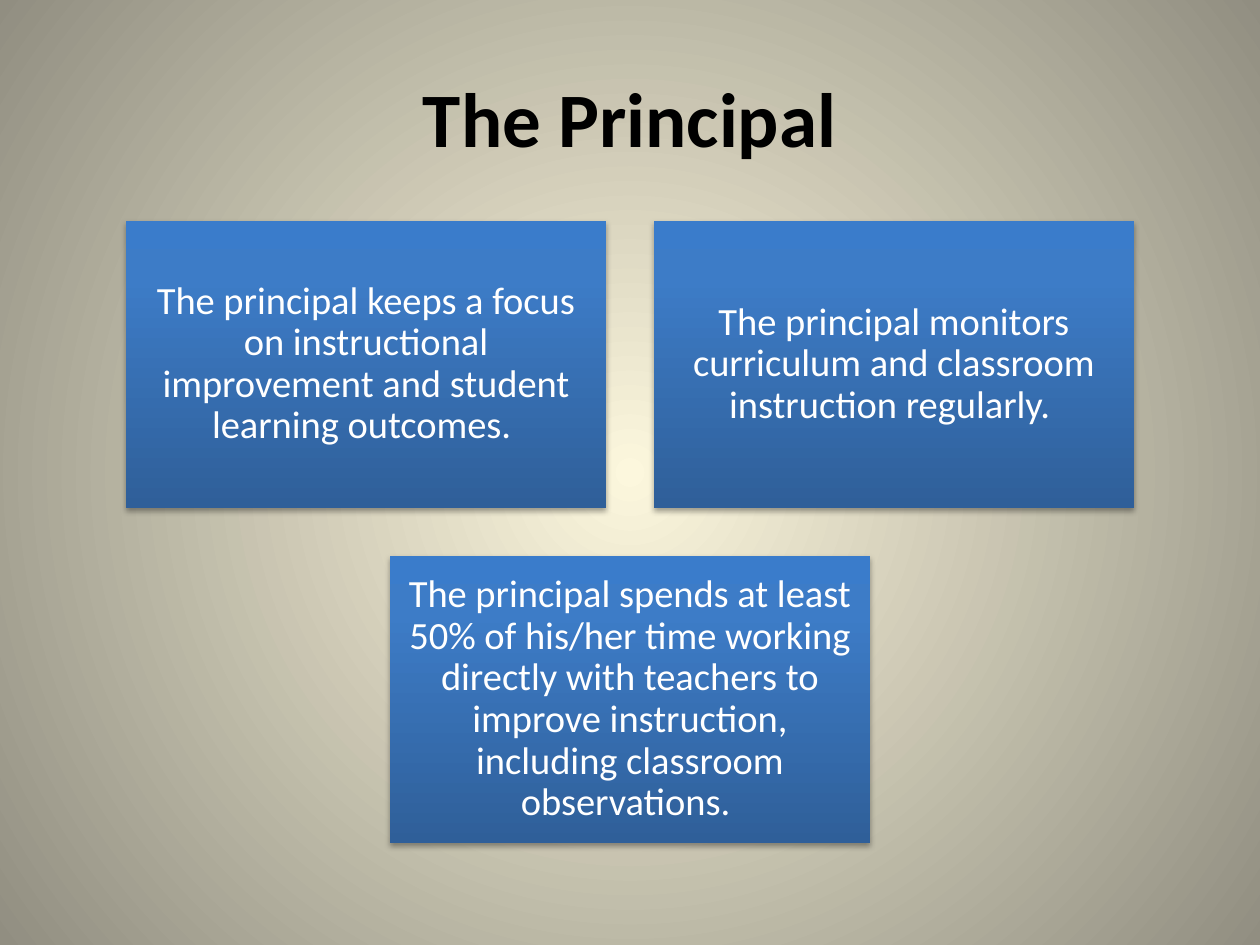
"""Build the slide on the principal's three duties."""
from lxml import etree
from pptx import Presentation
from pptx.dml.color import RGBColor as RGB
from pptx.enum.shapes import MSO_SHAPE as Kind
from pptx.enum.text import MSO_ANCHOR as Anchor, PP_ALIGN as Align
from pptx.oxml.ns import qn
from pptx.util import Inches, Pt

BLACK = RGB(0x00, 0x00, 0x00)
WHITE = RGB(0xFF, 0xFF, 0xFF)
CREAM = RGB(0xFC, 0xF7, 0xDD)
STONE = RGB(0x91, 0x8E, 0x81)
NAVY = RGB(0x2F, 0x5F, 0x99)
BLUE = RGB(0x3D, 0x7C, 0xC7)
SKY = RGB(0x3A, 0x7C, 0xCB)


def add(node, tag, **attrs):
    return etree.SubElement(node, qn(tag), attrs)


def shade(fill, root, stops):
    fill.gradient()
    grad = next(root.iter(qn("a:gradFill")))
    grad.clear()
    grad.set("rotWithShape", "1")
    items = add(grad, "a:gsLst")
    for pos, color in stops:
        stop = add(items, "a:gs", pos=str(pos * 1000))
        add(stop, "a:srgbClr", val=str(color))
    return grad


deck = Presentation()
deck.slide_width, deck.slide_height = Inches(10), Inches(7.5)
slide = deck.slides.add_slide(deck.slide_layouts[6])

grad = shade(slide.background.fill, slide.element, [(0, CREAM), (100, STONE)])
glow = add(grad, "a:path", path="circle")
add(glow, "a:fillToRect", l="50000", t="50000", r="50000", b="50000")

title = slide.shapes.add_textbox(Inches(0.5), Inches(0.3), Inches(9), Inches(1.25))
title.text_frame.text = "The Principal"
looks = [(title, {"size": Pt(44), "bold": True}, BLACK, 1.0, 0.1)]

wide, high, gap = 3.81, 2.28, 0.38
left, top = 1, 1.75
duties = [
    (0, 0, "The principal keeps a focus on instructional improvement and student learning outcomes. "),
    (1, 0, "The principal monitors curriculum and classroom instruction regularly. "),
    (0.5, 1, "The principal spends at least 50% of his/her time working directly with teachers "
             "to improve instruction, including classroom observations. "),
]
for col, row, text in duties:
    x, y = left + col * (wide + gap), top + row * (high + gap)
    box = slide.shapes.add_shape(Kind.RECTANGLE, Inches(x), Inches(y), Inches(wide), Inches(high))
    grad = shade(box.fill, box.element, [(0, NAVY), (80, BLUE), (100, SKY)])
    add(grad, "a:lin", ang="16200000", scaled="0")
    box.line.fill.background()
    box.shadow.inherit = False
    cast = add(next(box.element.iter(qn("a:effectLst"))), "a:outerShdw",
               blurRad=str(Pt(3.1)), dist=str(Pt(1.8)), dir="5400000", rotWithShape="0")
    tint = add(cast, "a:srgbClr", val=str(BLACK))
    add(tint, "a:alpha", val="35000")
    box.text_frame.text = text
    looks.append((box, {"size": Pt(22), "bold": False}, WHITE, 0.9, 0.09))

for shape, font, color, pitch, inset in looks:
    frame = shape.text_frame
    para = frame.paragraphs[0]
    face = para.runs[0].font
    side = Inches(inset)
    edge = Inches(min(inset, 0.09))
    formats = [
        (frame, {"word_wrap": True, "vertical_anchor": Anchor.MIDDLE,
                 "margin_left": side, "margin_right": side,
                 "margin_top": edge, "margin_bottom": edge}),
        (para, {"alignment": Align.CENTER, "line_spacing": pitch}),
        (face, {"name": "Calibri", **font}),
        (face.color, {"rgb": color}),
    ]
    for item, values in formats:
        for name, value in values.items():
            setattr(item, name, value)

deck.save("out.pptx")
